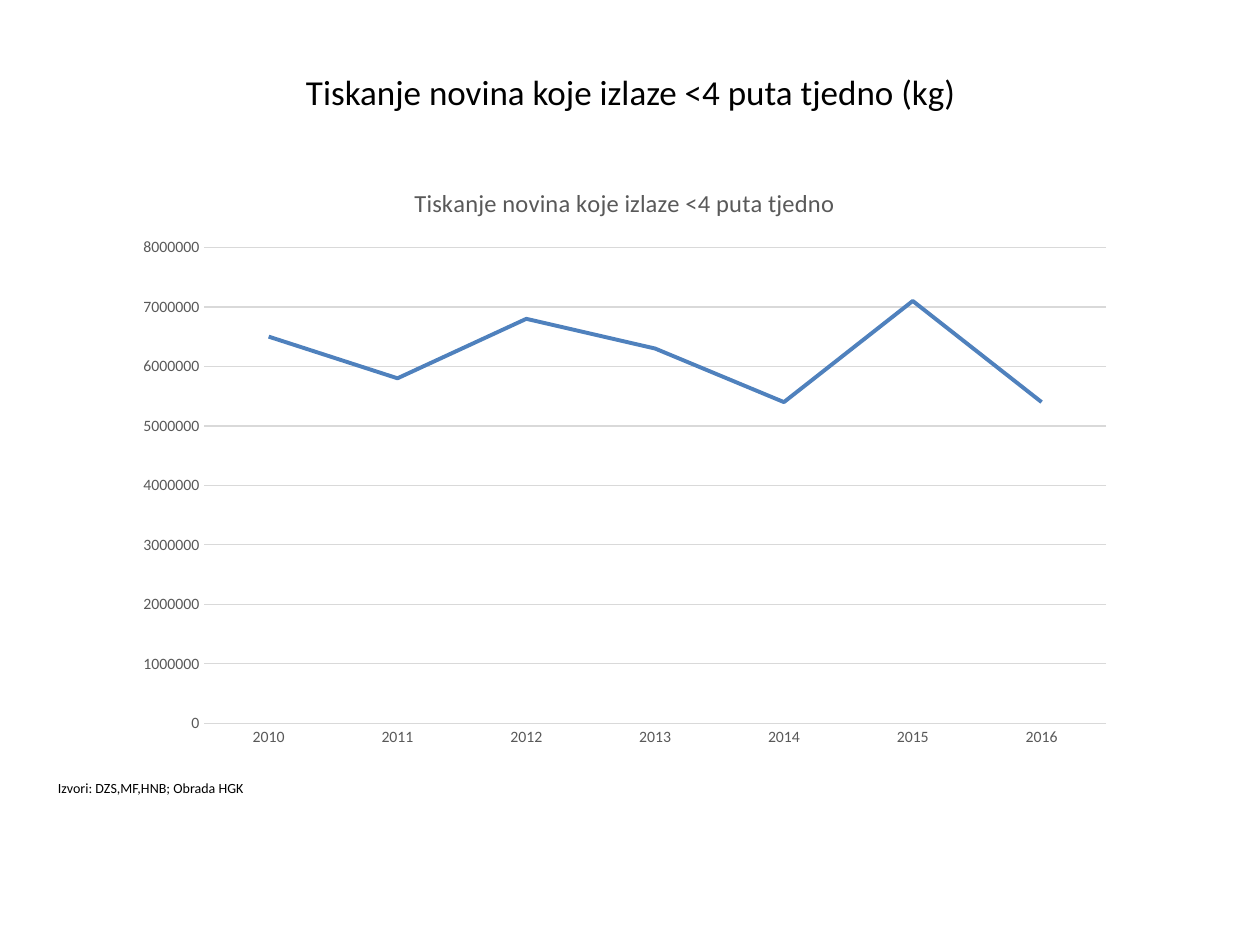
from pptx import Presentation
from pptx.chart import data as cd
from pptx.dml.color import RGBColor
from pptx.enum import chart as ce, text as te
from pptx.util import Pt

BLACK = RGBColor(0, 0, 0)
GREY = RGBColor(0x59, 0x59, 0x59)
RULE = RGBColor(0xD9, 0xD9, 0xD9)
BLUE = RGBColor(0x4F, 0x81, 0xBD)
FACE = "Calibri"
NAME = "Tiskanje novina koje izlaze <4 puta tjedno"
YEARS = range(2010, 2017)
MASS = [6500000, 5800000, 6800000, 6300000, 5400000, 7100000, 5400000]


def style(font, size, color):
    font.name, font.size, font.bold = FACE, Pt(size), False
    font.color.rgb = color


def stroke(line, color, width):
    line.color.rgb = color
    line.width = Pt(width)


def add_title(slide, box):
    title = slide.shapes.title
    title.left, title.top, title.width, title.height = map(Pt, box)
    frame = title.text_frame
    frame.text = f"{NAME} (kg)"
    frame.vertical_anchor = te.MSO_ANCHOR.MIDDLE
    frame.auto_size = te.MSO_AUTO_SIZE.NONE
    para = frame.paragraphs[0]
    para.alignment = te.PP_ALIGN.CENTER
    style(para.runs[0].font, 20, BLACK)


def add_source(slide, box):
    frame = slide.shapes.add_textbox(*map(Pt, box)).text_frame
    frame.word_wrap = True
    frame.auto_size = te.MSO_AUTO_SIZE.SHAPE_TO_FIT_TEXT
    frame.text = "Izvori: DZS,MF,HNB; Obrada HGK"
    style(frame.paragraphs[0].runs[0].font, 8, BLACK)


def add_graph(slide, box):
    data = cd.CategoryChartData(number_format="0")
    data.categories = YEARS
    data.add_series(NAME, MASS)
    chart = slide.shapes.add_chart(
        ce.XL_CHART_TYPE.LINE, *map(Pt, box), data).chart
    style(chart.font, 10, BLACK)
    chart.has_legend = False

    # Heading
    chart.has_title = True
    head = chart.chart_title.text_frame
    head.text = NAME
    style(head.paragraphs[0].runs[0].font, 14, GREY)
    chart.chart_title.include_in_layout = False

    # Axes
    cats, vals = chart.category_axis, chart.value_axis
    for axis, fmt in ((cats, "#,##0"), (vals, "0")):
        axis.major_tick_mark = axis.minor_tick_mark = ce.XL_TICK_MARK.NONE
        labels = axis.tick_labels
        style(labels.font, 9, GREY)
        labels.number_format = fmt
        labels.number_format_is_linked = False
    stroke(cats.format.line, RULE, 0.75)
    vals.format.line.fill.background()
    vals.has_major_gridlines = True
    stroke(vals.major_gridlines.format.line, RULE, 0.75)
    vals.minimum_scale, vals.maximum_scale = 0, 8000000
    vals.major_unit = 1000000

    # Line
    plot = chart.plots[0]
    plot.vary_by_categories = False
    line = plot.series[0]
    line.smooth = False
    line.marker.style = ce.XL_MARKER_STYLE.NONE
    stroke(line.format.line, BLUE, 2.25)


def main():
    deck = Presentation()
    deck.slide_width, deck.slide_height = Pt(720), Pt(540)
    slide = deck.slides.add_slide(deck.slide_layouts[5])
    add_title(slide, (36.5, 37.5, 648, 30))
    add_source(slide, (26, 442, 441, 17))
    add_graph(slide, (70.5, 93, 573, 340.5))
    deck.save("out.pptx")


if __name__ == "__main__":
    main()
